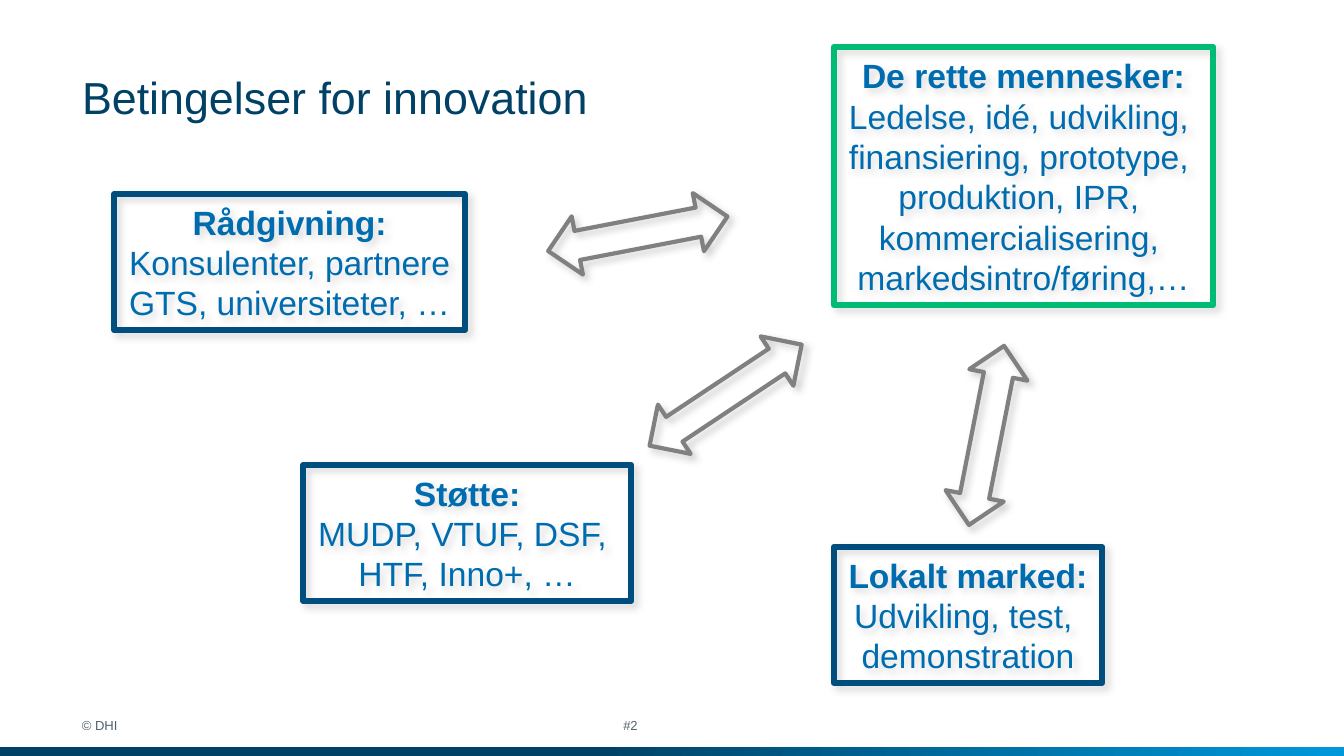
from dataclasses import dataclass

from lxml.etree import SubElement
from pptx import Presentation
from pptx.dml.color import RGBColor
from pptx.enum.shapes import MSO_SHAPE as Preset
from pptx.enum.text import MSO_ANCHOR as Anchor, MSO_AUTO_SIZE as AutoSize, PP_ALIGN as Align
from pptx.oxml.ns import qn
from pptx.util import Cm, Pt


@dataclass(frozen=True)
class Theme:
    """Colours, font and sizes of the slide."""

    font: str = "Arial"
    navy: str = "004165"
    sky: str = "0098DB"
    text: str = "006CB0"
    footer: str = "51626F"
    frame: str = "004E7E"
    accent: str = "00BB74"
    arrow: str = "808080"
    box_shadow: str = "A6A6A6"
    title_size: float = 24
    body_size: float = 18
    footer_size: float = 7
    frame_width: float = 3.25
    arrow_width: float = 2.25


THEME = Theme()


def set_attributes(target, values):
    """Set every attribute in the dict on the target."""
    for name, value in values.items():
        setattr(target, name, value)


def place(shape, left, top, width, height):
    """Move and size a shape, in centimetres."""
    lengths = {"left": left, "top": top, "width": width, "height": height}
    set_attributes(shape, {name: Cm(value) for name, value in lengths.items()})


def write(paragraph, text, size, color, bold=False, align=Align.LEFT):
    """Put one formatted run in a paragraph."""
    paragraph.alignment = align
    run = paragraph.add_run()
    run.text = text
    set_attributes(run.font, {"name": THEME.font, "size": Pt(size), "bold": bold})
    run.font.color.rgb = RGBColor.from_string(color)


def clear_margins(frame):
    """Remove the inner margins of a text frame and wrap its text."""
    set_attributes(frame, {
        "margin_left": 0, "margin_right": 0, "margin_top": 0, "margin_bottom": 0,
        "word_wrap": True, "auto_size": AutoSize.NONE,
    })


def cast_shadow(shape, color):
    """Give a shape a soft shadow to the lower right."""
    shape.shadow.inherit = False
    effects = shape._element.spPr.find(qn("a:effectLst"))
    shadow = SubElement(effects, qn("a:outerShdw"), {
        "blurRad": str(Pt(4)), "dist": str(Pt(3)), "dir": "2700000",
        "algn": "tl", "rotWithShape": "0",
    })
    tint = SubElement(shadow, qn("a:srgbClr"), val=color)
    SubElement(tint, qn("a:alpha"), val="40000")


def add_outline(slide, preset, bounds, color, width, shadow):
    """Add an unfilled preset shape with a line and a shadow."""
    shape = slide.shapes.add_shape(preset, *map(Cm, bounds))
    shape.fill.background()
    shape.line.color.rgb = RGBColor.from_string(color)
    shape.line.width = Pt(width)
    cast_shadow(shape, shadow)
    return shape


def add_box(slide, bounds, lines, color=THEME.frame):
    """Add a framed box whose first line is a bold heading."""
    box = add_outline(slide, Preset.RECTANGLE, bounds, color, THEME.frame_width, THEME.box_shadow)
    frame = box.text_frame
    set_attributes(frame, {"word_wrap": False, "auto_size": AutoSize.SHAPE_TO_FIT_TEXT})
    for index, line in enumerate(lines):
        paragraph = frame.add_paragraph() if index else frame.paragraphs[0]
        write(paragraph, line, THEME.body_size, THEME.text, index == 0, Align.CENTER)


def add_arrow(slide, left, top, rotation):
    """Add a rotated double arrow."""
    bounds = (left, top, 3.45, 1.12)
    arrow = add_outline(slide, Preset.LEFT_RIGHT_ARROW, bounds, THEME.arrow,
                        THEME.arrow_width, THEME.arrow)
    arrow.rotation = rotation


def add_footer(slide, left, width, text):
    """Add a small footer text."""
    box = slide.shapes.add_textbox(Cm(left), Cm(13.56), Cm(width), Cm(0.38))
    clear_margins(box.text_frame)
    write(box.text_frame.paragraphs[0], text, THEME.footer_size, THEME.footer)


def add_bottom_band(slide):
    """Add the gradient band along the bottom edge."""
    band = slide.shapes.add_shape(Preset.RECTANGLE, 0, Cm(14.13), Cm(25.4), Cm(0.16))
    band.shadow.inherit = False
    band.line.fill.background()
    band.fill.gradient()
    band.fill.gradient_angle = 0
    stops = ((0.44, THEME.navy), (1, THEME.sky))
    for stop, (position, color) in zip(band.fill.gradient_stops, stops):
        stop.position = position
        stop.color.rgb = RGBColor.from_string(color)


def set_title(slide, text):
    """Place and format the title placeholder."""
    title = slide.shapes.title
    place(title, 1.55, 0.48, 22.33, 1.86)
    clear_margins(title.text_frame)
    title.text_frame.vertical_anchor = Anchor.BOTTOM
    write(title.text_frame.paragraphs[0], text, THEME.title_size, THEME.navy)


def main():
    """Build and save the slide."""
    presentation = Presentation()
    set_attributes(presentation, {"slide_width": Cm(25.4), "slide_height": Cm(14.29)})
    slide = presentation.slides.add_slide(presentation.slide_layouts[5])
    add_bottom_band(slide)
    set_title(slide, "Betingelser for innovation")
    add_footer(slide, 1.55, 3.94, "© DHI")
    add_footer(slide, 11.78, 1.42, "#2")
    add_box(slide, (15.76, 0.89, 7.17, 4.88), (
        "De rette mennesker:", "Ledelse, idé, udvikling, ", "finansiering, prototype, ",
        "produktion, IPR, ", "kommercialisering, ", "markedsintro/føring,…",
    ), THEME.accent)
    add_box(slide, (2.16, 3.67, 6.63, 2.57),
            ("Rådgivning:", "Konsulenter, partnere", "GTS, universiteter, …"))
    add_box(slide, (5.73, 8.79, 6.2, 2.57),
            ("Støtte:", "MUDP, VTUF, DSF, ", "HTF, Inno+, …"))
    add_box(slide, (15.76, 10.34, 5.07, 2.57),
            ("Lokalt marked:", "Udvikling, test, ", "demonstration"))
    add_arrow(slide, 10.33, 3.86, 349.1)
    add_arrow(slide, 11.99, 6.91, 326.4)
    add_arrow(slide, 16.92, 7.67, 281.1)
    presentation.save("out.pptx")


if __name__ == "__main__":
    main()
